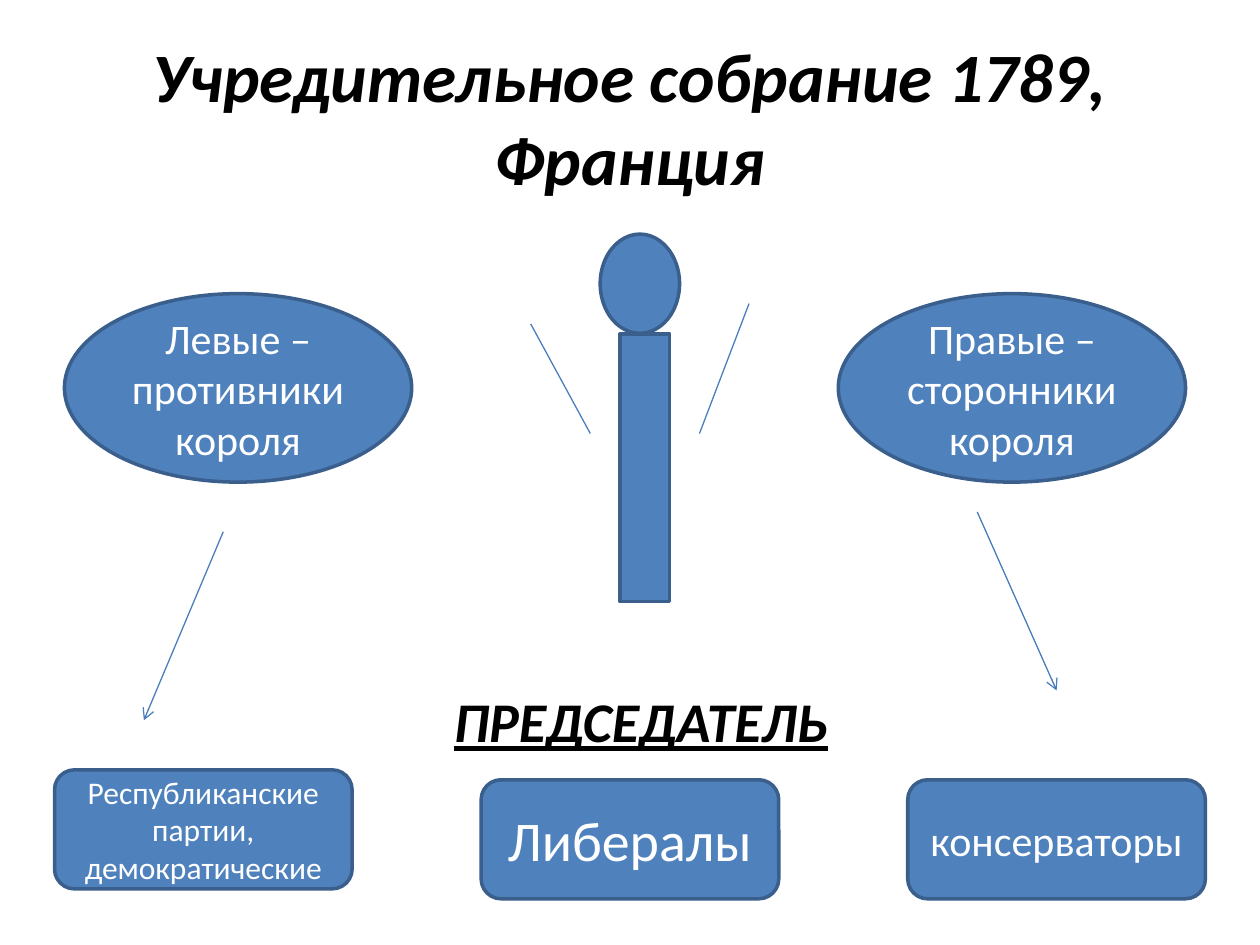
from lxml.etree import SubElement
from pptx import Presentation
from pptx.dml.color import RGBColor
from pptx.enum.shapes import MSO_CONNECTOR, MSO_SHAPE
from pptx.enum.text import MSO_ANCHOR, PP_ALIGN
from pptx.oxml.ns import qn
from pptx.util import Cm, Pt


def color(value):
    return RGBColor.from_string(value)


def write(shape, text, size=24, hue="FFFFFF", font="Calibri", emphasis=False,
          underline=False, align=PP_ALIGN.CENTER, anchor=MSO_ANCHOR.MIDDLE):
    frame = shape.text_frame
    frame.word_wrap = True
    frame.vertical_anchor = anchor
    para = frame.paragraphs[0]
    para.alignment = align
    span = para.add_run()
    span.text = text
    span.font.name = font
    span.font.size = Pt(size)
    span.font.bold = span.font.italic = emphasis
    span.font.underline = underline
    span.font.color.rgb = color(hue)


class Sketch:
    fill = "4F81BD"
    outline = "3A5F8C"
    stroke = "4B7EBC"
    ink = "000000"

    def __init__(self, page):
        self.page = page

    def heading(self, text, left, top, width, height, **style):
        box = self.page.shapes.add_textbox(Cm(left), Cm(top), Cm(width), Cm(height))
        write(box, text, hue=self.ink, emphasis=True, **style)

    def figure(self, kind, left, top, width, height, text=None, **style):
        shape = self.page.shapes.add_shape(kind, Cm(left), Cm(top), Cm(width), Cm(height))
        shape.shadow.inherit = False
        shape.fill.solid()
        shape.fill.fore_color.rgb = color(self.fill)
        shape.line.color.rgb = color(self.outline)
        shape.line.width = Pt(2)
        if text:
            write(shape, text, **style)

    def line(self, start_x, start_y, end_x, end_y, arrow=False):
        connector = self.page.shapes.add_connector(
            MSO_CONNECTOR.STRAIGHT, Cm(start_x), Cm(start_y), Cm(end_x), Cm(end_y))
        connector.line.color.rgb = color(self.stroke)
        connector.line.width = Pt(0.75)
        if arrow:
            SubElement(connector.line._get_or_add_ln(), qn("a:tailEnd"), type="arrow")
        SubElement(connector._element.spPr, qn("a:effectLst"))


def main():
    deck = Presentation()
    deck.slide_width, deck.slide_height = Cm(25.4), Cm(19.05)
    sketch = Sketch(deck.slides.add_slide(deck.slide_layouts[6]))

    # Title
    sketch.heading("Учредительное собрание 1789, Франция", 1.27, 0.76, 22.86, 3.18, size=39.6)

    # Chairman: head, body and raised arms
    sketch.figure(MSO_SHAPE.OVAL, 12.1, 4.72, 1.6, 2)
    sketch.figure(MSO_SHAPE.RECTANGLE, 12.5, 6.73, 1, 5.4)
    sketch.line(14.1, 8.74, 15.1, 6.12)
    sketch.line(11.9, 8.74, 10.7, 6.53)
    sketch.heading("ПРЕДСЕДАТЕЛЬ", 8.9, 13.72, 8.8, 1.62, size=32, underline=True,
                   align=PP_ALIGN.LEFT, anchor=MSO_ANCHOR.TOP)

    # Two wings of the assembly
    for left, text in ((16.9, "Правые – сторонники короля"),
                       (1.3, "Левые – противники короля")):
        sketch.figure(MSO_SHAPE.OVAL, left, 5.92, 7, 3.8, text)

    # Arrows from the wings to their parties
    sketch.line(4.5, 10.72, 2.9, 14.52, arrow=True)
    sketch.line(19.7, 10.32, 21.3, 13.92, arrow=True)

    # Parties, evenly spaced
    parties = (("Республиканские партии, демократические", 18, 15.52),
               ("Либералы", 32, 15.72),
               ("консерваторы", 24, 15.72))
    for index, (text, size, top) in enumerate(parties):
        sketch.figure(MSO_SHAPE.ROUNDED_RECTANGLE, 1.1 + 8.6 * index, top, 6, 2.4,
                      text, size=size)

    deck.save("out.pptx")


if __name__ == "__main__":
    main()
